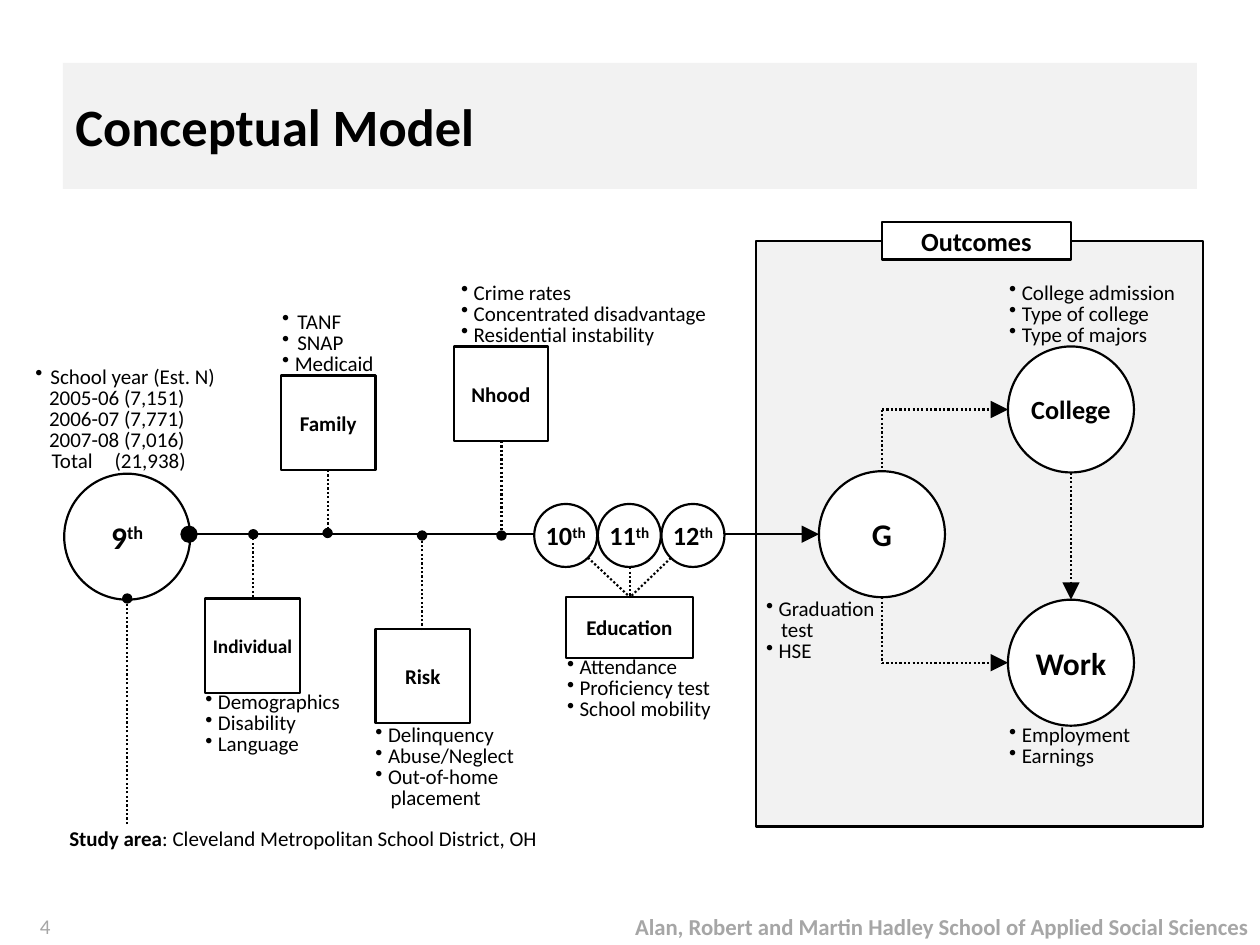
from dataclasses import dataclass

import pptx
import pptx.dml.color
import pptx.enum.dml
import pptx.enum.shapes
import pptx.enum.text
import pptx.oxml.ns
import pptx.util
from lxml import etree
from pptx.util import Inches

COLORS = {"ink": "000000", "panel": "F2F2F2", "white": "FFFFFF", "muted": "A6A6A6"}
FONT = "Calibri"
SHAPES = pptx.enum.shapes.MSO_SHAPE
ALIGN = pptx.enum.text.PP_ALIGN
ANCHOR = pptx.enum.text.MSO_ANCHOR
AXIS = 4.24


@dataclass
class Node:
    left: float
    top: float
    width: float
    height: float
    label: str = ""
    size: float = 12
    suffix: str = ""
    kind: int = SHAPES.RECTANGLE
    fill: str | None = None


@dataclass
class Link:
    start: tuple[float, float]
    end: tuple[float, float]
    tail: str = ""
    tail_size: str = "med"
    head: str = ""
    dotted: bool = True


@dataclass
class Item:
    text: str
    bullet: bool = True
    margin: float = 0.1
    hang: float = 0.1
    tab: float = 0


@dataclass
class Notes:
    left: float
    top: float
    width: float
    height: float
    items: list[Item]
    above: bool = False
    inset: float = 0.01


def color(name: str) -> pptx.dml.color.RGBColor:
    return pptx.dml.color.RGBColor.from_string(COLORS[name])


def add_xml(parent, tag: str, **attributes: str):
    element = etree.SubElement(parent, pptx.oxml.ns.qn(tag))
    for key, value in attributes.items():
        element.set(key, value)
    return element


def style(span, size: float, bold: bool = False, ink: str = "ink") -> None:
    span.font.name = FONT
    span.font.size = pptx.util.Pt(size)
    span.font.bold = bold
    span.font.color.rgb = color(ink)


def prepare(frame, anchor, inset: float = 0) -> None:
    frame.word_wrap = True
    frame.vertical_anchor = anchor
    frame.margin_left = Inches(inset)
    frame.margin_top = frame.margin_right = frame.margin_bottom = 0


def draw_node(page, node: Node) -> None:
    box = page.shapes.add_shape(node.kind, Inches(node.left), Inches(node.top),
                                Inches(node.width), Inches(node.height))
    box.shadow.inherit = False
    if node.fill:
        box.fill.solid()
        box.fill.fore_color.rgb = color(node.fill)
    else:
        box.fill.background()
    box.line.color.rgb = color("ink")
    box.line.width = pptx.util.Pt(1.25)
    if not node.label:
        return
    prepare(box.text_frame, ANCHOR.MIDDLE)
    box.text_frame.text = node.label
    para = box.text_frame.paragraphs[0]
    para.alignment = ALIGN.CENTER
    if node.suffix:
        para.add_run().text = node.suffix
        para.runs[1].font._element.set("baseline", "30000")
    for span in para.runs:
        style(span, node.size, bold=True)


def circle(left: float, top: float, diameter: float, label: str, size: float, suffix: str = "") -> Node:
    return Node(left, top, diameter, diameter, label, size, suffix, SHAPES.OVAL, "white")


def draw_link(page, link: Link) -> None:
    line = page.shapes.add_connector(pptx.enum.shapes.MSO_CONNECTOR.STRAIGHT,
                                     *map(Inches, link.start + link.end))
    line.line.color.rgb = color("ink")
    line.line.width = pptx.util.Pt(1.25)
    if link.dotted:
        line.line.dash_style = pptx.enum.dml.MSO_LINE.ROUND_DOT
    outline = line.line._get_or_add_ln()
    if link.head:
        add_xml(outline, "a:headEnd", type=link.head, w="lg", len="lg")
    if link.tail:
        add_xml(outline, "a:tailEnd", type=link.tail, w=link.tail_size, len=link.tail_size)
    add_xml(line._element.spPr, "a:effectLst")


def add_text(page, left: float, top: float, width: float, height: float):
    return page.shapes.add_textbox(*map(Inches, (left, top, width, height))).text_frame


def draw_notes(page, notes: Notes) -> None:
    frame = add_text(page, notes.left, notes.top, notes.width, notes.height)
    prepare(frame, ANCHOR.BOTTOM if notes.above else ANCHOR.TOP, notes.inset)
    frame.text = "\n".join(item.text for item in notes.items)
    for para, item in zip(frame.paragraphs, notes.items):
        para.line_spacing = pptx.util.Pt(12)
        settings = para._p.get_or_add_pPr()
        settings.set("marL", str(Inches(item.margin)))
        settings.set("indent", str(Inches(-item.hang if item.bullet else 0)))
        if item.bullet:
            add_xml(settings, "a:buChar", char="•")
        else:
            add_xml(settings, "a:buNone")
        if item.tab:
            stops = add_xml(settings, "a:tabLst")
            add_xml(stops, "a:tab", pos=str(Inches(item.tab)), algn="l")
        style(para.runs[0], 12)


def bullets(*texts: str) -> list[Item]:
    return [Item(text) for text in texts]


def draw_footer(page, left: float, width: float, text: str, size: float, bold: bool) -> None:
    frame = add_text(page, left, 7.2, width, 0.3)
    frame.word_wrap = True
    frame.vertical_anchor = ANCHOR.MIDDLE
    frame.text = text
    frame.paragraphs[0].alignment = ALIGN.RIGHT
    style(frame.paragraphs[0].runs[0], size, bold, "muted")


def draw_title(page, text: str) -> None:
    box = page.shapes.add_shape(SHAPES.RECTANGLE, *map(Inches, (0.5, 0.5, 9, 1)))
    box.shadow.inherit = False
    box.fill.solid()
    box.fill.fore_color.rgb = color("panel")
    box.line.fill.background()
    box.text_frame.vertical_anchor = ANCHOR.MIDDLE
    box.text_frame.text = text
    box.text_frame.paragraphs[0].alignment = ALIGN.LEFT
    style(box.text_frame.paragraphs[0].runs[0], 30, bold=True)


def draw_study_area(page) -> None:
    frame = add_text(page, 0.54, 6.55, 4.36, 0.2)
    prepare(frame, ANCHOR.BOTTOM, 0.01)
    para = frame.paragraphs[0]
    para.line_spacing = pptx.util.Pt(12)
    for text, bold in (("Study area", True), (": Cleveland Metropolitan School District, OH", False)):
        span = para.add_run()
        span.text = text
        style(span, 12, bold)


BACK_NODES = [Node(6, 1.91, 3.55, 4.65, fill="panel"), circle(0.51, 3.76, 1, "9", 18, "th")]
LINKS = [Link((1.5, AXIS), (6.5, AXIS), "triangle", "lg", "oval", False), Link((7, 3.25), (7, 5.26))]
LINKS += [Link(start, end, "triangle", "lg") for start, end in
          (((7, 3.25), (8, 3.25)), ((7, 5.26), (8, 5.26)), ((8.5, 3.75), (8.5, 4.76)))]
LINKS += [Link((x, y), (x, end), "oval") for x, y, end in
          ((2.6, 3.73, 4.23), (3.98, 3.5, 4.25), (2.01, 4.74, AXIS), (3.35, 5, 4.25), (1.01, 6.54, 4.75))]
LINKS += [Link((x, 4.26), (5, 4.74)) for x in (4.49, 5, 5.5)]
FRONT_NODES = [circle(8, 2.75, 1, "College", 15), circle(8, 4.76, 1, "Work", 18), circle(6.5, 3.74, 1, "G", 18)]
FRONT_NODES += [circle(4.24 + 0.505 * i, 4, 0.5, str(10 + i), 15, "th") for i in range(3)]
FRONT_NODES += [Node(left, top, 0.75, 0.75, label, size) for left, top, label, size in
                ((2.23, 2.98, "Family", 12), (1.63, 4.75, "Individual", 11),
                 (2.98, 4.99, "Risk", 12), (3.6, 2.75, "Nhood", 12))]
FRONT_NODES += [Node(4.49, 4.74, 1.01, 0.48, "Education"), Node(7, 1.76, 1.5, 0.3, "Outcomes", 15, fill="white")]
YEARS = ("2005-06 (7,151)", "2006-07 (7,771)", "2007-08 (7,016)")
NOTES = [
    Notes(8, 2.15, 1.75, 0.6, bullets("College admission", "Type of college", "Type of majors"), True),
    Notes(8, 5.76, 1.75, 0.6, bullets("Employment", "Earnings")),
    Notes(6.07, 4.76, 0.9, 0.46, [Item("Graduation"), Item("test", False, 0.12), Item("HSE")]),
    Notes(2.98, 5.76, 1.2, 0.8, bullets("Delinquency", "Abuse/Neglect", "Out-of-home")
          + [Item("placement", False, 0.12)], inset=0),
    Notes(4.49, 5.22, 1.25, 0.54, bullets("Attendance", "Proficiency test", "School mobility")),
    Notes(3.65, 2.25, 2.25, 0.5, bullets("Crime rates", "Concentrated disadvantage", "Residential instability"), True),
    Notes(2.23, 2.48, 0.75, 0.5, [Item("TANF", True, 0.12, 0.12), Item("SNAP", True, 0.12, 0.12),
                                  Item("Medicaid")], True),
    Notes(1.63, 5.5, 1.2, 0.6, bullets("Demographics", "Disability", "Language"), inset=0),
    Notes(0.27, 2.85, 1.48, 0.9, [Item("School year (Est. N)", True, 0.12, 0.12)]
          + [Item(year, False, 0.11) for year in YEARS]
          + [Item("Total\t(21,938)", False, 0.13, tab=0.72)], True),
]


def main() -> None:
    deck = pptx.Presentation()
    deck.slide_width, deck.slide_height = Inches(10), Inches(7.5)
    page = deck.slides.add_slide(deck.slide_layouts[6])
    draw_footer(page, 4, 6, "Alan, Robert and Martin Hadley School of Applied Social Sciences", 13, True)
    draw_footer(page, 0, 0.5, "4", 12, False)
    draw_title(page, "Conceptual Model")
    for draw, parts in ((draw_node, BACK_NODES), (draw_link, LINKS), (draw_node, FRONT_NODES), (draw_notes, NOTES)):
        for part in parts:
            draw(page, part)
    draw_study_area(page)
    deck.save("out.pptx")


if __name__ == "__main__":
    main()
